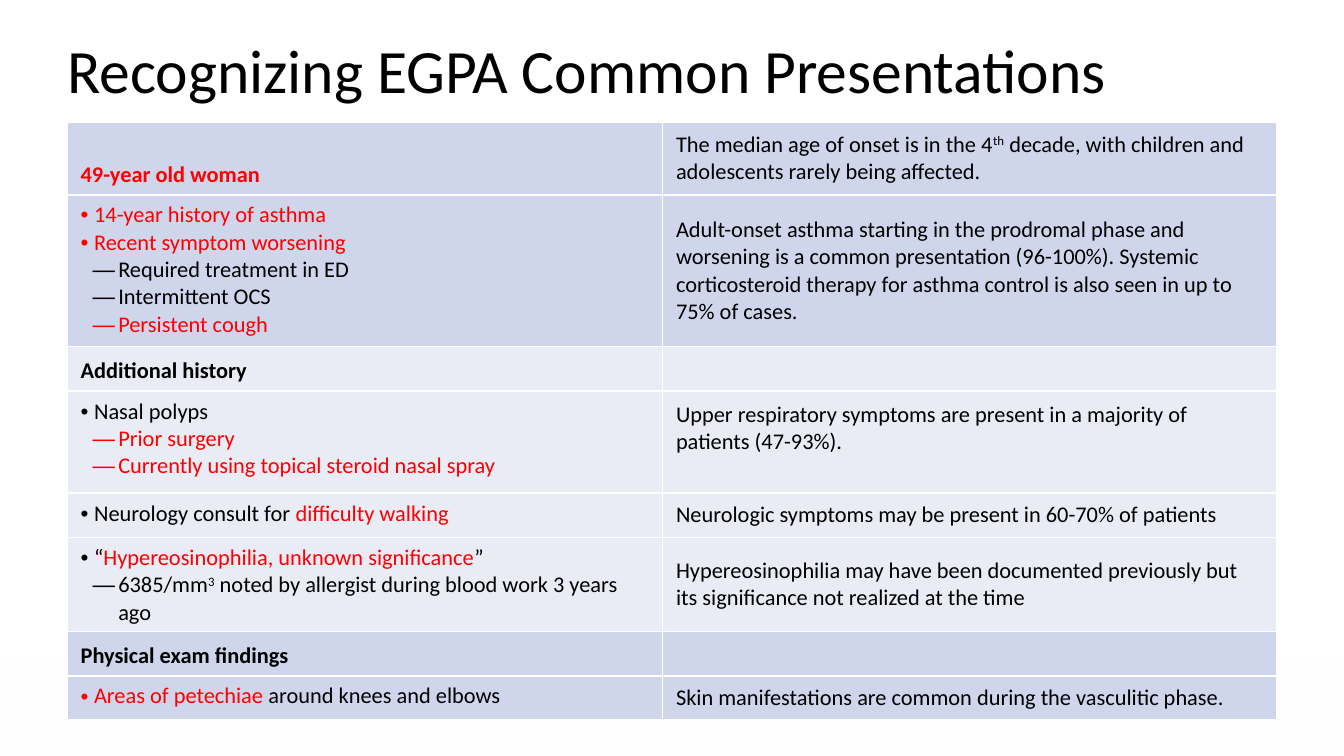
from lxml import etree
from pptx import Presentation, util as u
from pptx.dml.color import RGBColor
from pptx.enum import shapes, text
from pptx.oxml.ns import qn

WIDE = 10
HIGH = WIDE * 9 / 16
EDGE = 0.05 * WIDE
BLACK, RED, WHITE = "000000", "FF0000", "FFFFFF"
DARK, PALE = "CFD5EA", "E9EBF5"
MID, LOW, TOP = text.MSO_ANCHOR.MIDDLE, text.MSO_ANCHOR.BOTTOM, text.MSO_ANCHOR.TOP
# mark: (level, left margin, hanging indent)
MARKS = {"•": (0, 0.1, -0.1), "—": (1, 0.28, -0.19)}


def tint(code):
    return RGBColor.from_string(code)


def write(frame, lines, size=12, bold=False, color=BLACK, gap=None):
    """Fill a frame; "|" parts the runs, "~" opens a red run, "^" a raised one."""
    frame.word_wrap = True
    for i, line in enumerate(lines):
        para = frame.add_paragraph() if i else frame.paragraphs[0]
        if line[:1] in MARKS:
            level, left, hang = MARKS[line[0]]
            para.level = level
            props = para._p.get_or_add_pPr()
            props.set("marL", str(u.Inches(left)))
            props.set("indent", str(u.Inches(hang)))
            etree.SubElement(props, qn("a:buFont"), typeface="Arial")
            etree.SubElement(props, qn("a:buChar"), char=line[0])
            line = line[2:]
        if gap:
            para.line_spacing = gap
        for part in line.split("|") if line else []:
            run = para.add_run()
            run.text = part.lstrip("~^")
            font = run.font
            font.name, font.size, font.bold = "Calibri", u.Pt(size), bold
            font.color.rgb = tint(RED if part.startswith("~") else color)
            if part.startswith("^"):
                run._r.get_or_add_rPr().set("baseline", "30000")
        if not line:
            etree.SubElement(para._p, qn("a:endParaRPr"), sz=str(size * 100))


deck = Presentation()
deck.slide_width, deck.slide_height = u.Inches(WIDE), u.Inches(HIGH)
slide = deck.slides.add_slide(deck.slide_layouts[6])

# Footer band
band = slide.shapes.add_shape(
    shapes.MSO_SHAPE.RECTANGLE, 0, u.Inches(4.91), u.Inches(WIDE), u.Inches(HIGH - 4.91))
band.shadow.inherit = False
band.fill.solid()
band.fill.fore_color.rgb = band.line.color.rgb = tint("FEFEFE")
band.line.width = u.Pt(1)

# Title
title = slide.shapes.add_textbox(
    u.Inches(EDGE), u.Inches(0.07), u.Inches(WIDE - 2 * EDGE), u.Inches(0.95)).text_frame
title.margin_left = title.margin_right = 0
title.vertical_anchor = MID
write(title, ["Recognizing EGPA Common Presentations"], size=33, gap=0.9)

# Rows: height, fill, kind of left cell, its lines, right text
rows = [
    (0.54, DARK, "head", ["~49-year old woman"],
     "The median age of onset is in the 4|^th| decade, with children and "
     "adolescents rarely being affected."),
    (1.13, DARK, "list",
     ["• ~14-year history of asthma", "• ~Recent symptom worsening",
      "— Required treatment in ED", "— Intermittent OCS", "— ~Persistent cough"],
     "Adult-onset asthma starting in the prodromal phase and worsening is a common "
     "presentation (96-100%). Systemic corticosteroid therapy for asthma control is "
     "also seen in up to 75% of cases."),
    (0.33, PALE, "head", ["Additional history"], ""),
    (0.76, PALE, "list",
     ["• Nasal polyps", "— ~Prior surgery", "— ~Currently using topical steroid nasal spray"],
     "Upper respiratory symptoms are present in a majority of patients (47-93%)."),
    (0.33, PALE, "list", ["• Neurology consult for |~difficulty walking"],
     "Neurologic symptoms may be present in 60-70% of patients"),
    (0.68, PALE, "list",
     ["• “|~Hypereosinophilia, unknown significance|”",
      "— 6385/mm|^3| noted by allergist during blood work 3 years ago"],
     "Hypereosinophilia may have been documented previously but its significance "
     "not realized at the time"),
    (0.33, DARK, "head", ["Physical exam findings"], ""),
    (0.33, DARK, "list", ["• ~Areas of petechiae |around knees and elbows"],
     "Skin manifestations are common during the vasculitic phase."),
]

# Table
grid = slide.shapes.add_table(
    len(rows), 2, u.Inches(EDGE), u.Inches(0.91), u.Inches(WIDE - 2 * EDGE),
    u.Inches(sum(row[0] for row in rows))).table
grid.first_row = grid.horz_banding = False
for col, width in zip(grid.columns, (4.43, 4.57)):
    col.width = u.Inches(width)

for r, (height, fill, kind, left, right) in enumerate(rows):
    grid.rows[r].height = u.Inches(height)
    head = kind == "head"
    for c, lines in enumerate((left, [right])):
        cell = grid.cell(r, c)
        write(cell.text_frame, lines, bold=head and c == 0)
        cell.vertical_anchor = MID if c else LOW if head else TOP
        # White borders come before the fill
        props = cell._tc.get_or_add_tcPr()
        for side in ("lnL", "lnR", "lnT", "lnB"):
            line = etree.SubElement(props, qn("a:" + side), w=str(u.Pt(1)))
            paint = etree.SubElement(line, qn("a:solidFill"))
            etree.SubElement(paint, qn("a:srgbClr"), val=WHITE)
        cell.fill.solid()
        cell.fill.fore_color.rgb = tint(fill)

# The nasal note sits a little above the middle
grid.cell(3, 1).margin_bottom = u.Inches(0.25)

deck.save("out.pptx")
